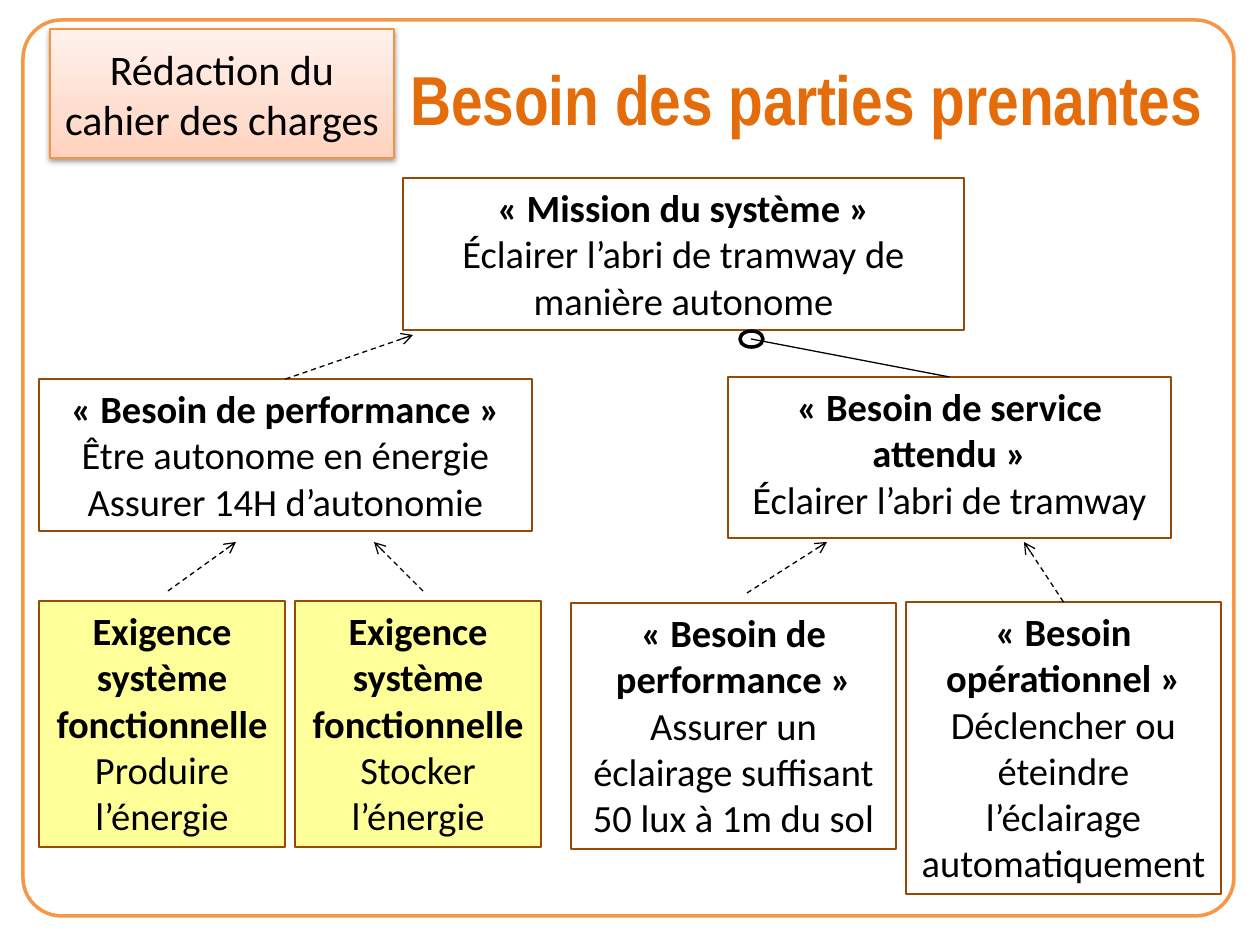
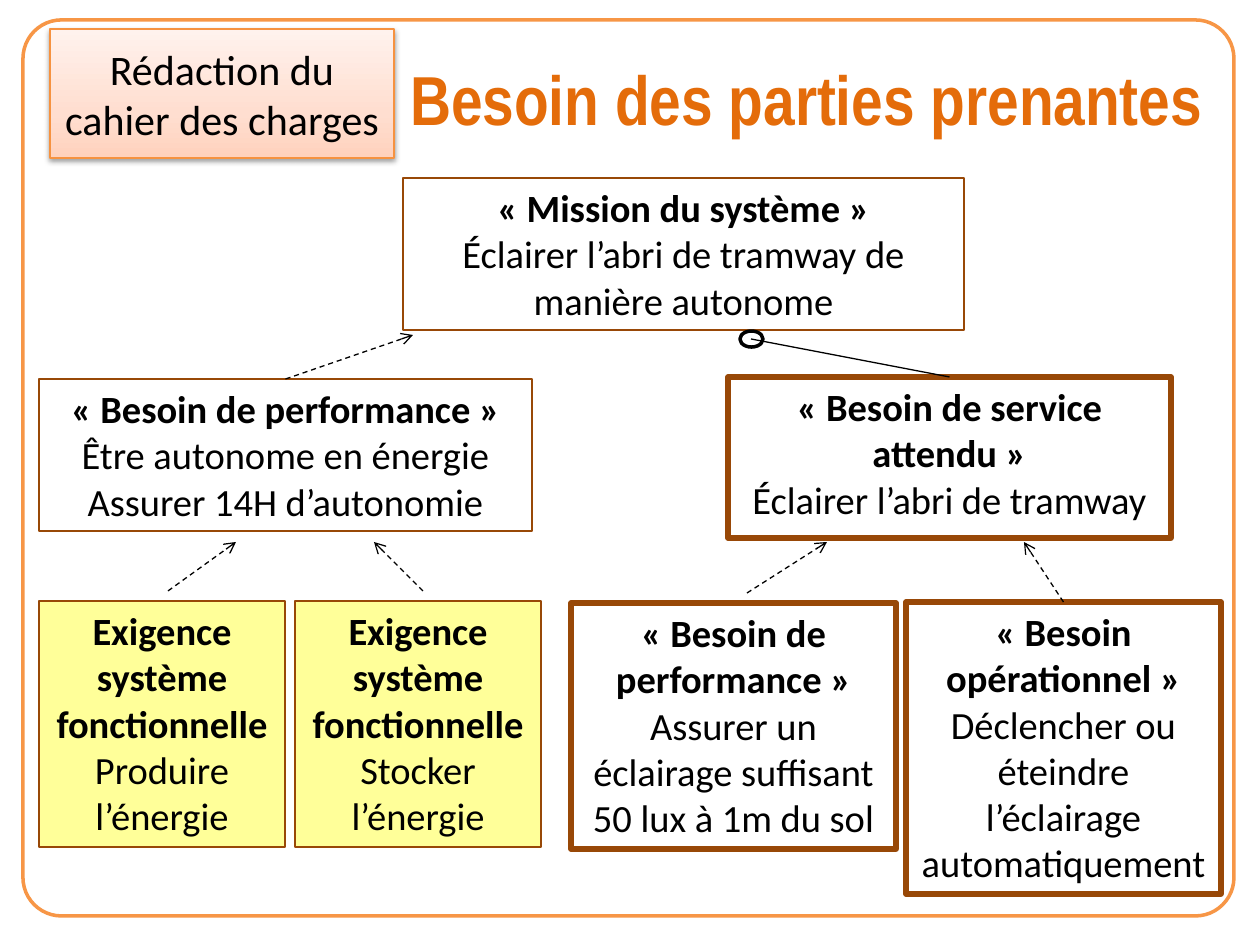
"""Build two slides showing the tree of stakeholder needs for a tram shelter."""
import copy
from typing import NamedTuple, Optional

import pptx
import pptx.dml.color
import pptx.enum.dml
import pptx.enum.shapes
import pptx.enum.text
import pptx.util
from lxml import etree
from pptx.oxml import ns

RGBColor = pptx.dml.color.RGBColor
Shapes = pptx.enum.shapes.MSO_SHAPE
Anchor = pptx.enum.text.MSO_ANCHOR

BLACK = RGBColor(0x00, 0x00, 0x00)
ORANGE = RGBColor(0xE4, 0x6C, 0x0A)
FRAME_ORANGE = RGBColor(0xF7, 0x96, 0x46)
BADGE_LINE = RGBColor(0xF6, 0x92, 0x40)
BADGE_STOPS = (
    (0.0, RGBColor(0xFF, 0xD2, 0xBD)),
    (0.35, RGBColor(0xFF, 0xDE, 0xD0)),
    (1.0, RGBColor(0xFF, 0xF2, 0xED)),
)
BROWN = RGBColor(0x98, 0x48, 0x07)
YELLOW = RGBColor(0xFF, 0xFF, 0x99)

BODY_FONT = "Calibri"
TITLE_FONT = "Arial Narrow"
PX_PER_INCH = 126
TITLE_ONLY_LAYOUT = 5
TOP_SITE = 0


class Area(NamedTuple):
    left: int
    top: int
    width: int
    height: int


class Need(NamedTuple):
    name: str
    area: Area
    heading: str
    details: tuple[str, ...]
    fill: Optional[RGBColor] = None
    line_width: float = 1


class Link(NamedTuple):
    start: tuple[int, int]
    end: tuple[int, int]
    from_top_of: Optional[str] = None
    dashed_arrow: bool = True


SLIDE_AREA = Area(0, 0, 1260, 945)
FRAME_AREA = Area(23, 20, 1211, 896)
BADGE_AREA = Area(50, 29, 344, 129)
TITLE_AREA = Area(393, 39, 827, 118)
RING_AREA = Area(740, 331, 23, 16)

NEEDS = (
    Need("mission", Area(403, 178, 561, 152), "« Mission du système »",
         ("Éclairer l’abri de tramway de manière autonome",), line_width=0.75),
    Need("performance", Area(39, 379, 493, 152), "« Besoin de performance »",
         ("Être autonome en énergie", "Assurer 14H d’autonomie")),
    Need("produce", Area(39, 601, 246, 246), "Exigence système fonctionnelle",
         ("Produire l’énergie",), YELLOW),
    Need("store", Area(295, 601, 246, 246), "Exigence système fonctionnelle",
         ("Stocker l’énergie",), YELLOW),
    Need("service", Area(728, 377, 443, 161), "« Besoin de service attendu »",
         ("Éclairer l’abri de tramway",)),
    Need("lighting", Area(571, 603, 325, 246), "« Besoin de performance »",
         ("Assurer un éclairage suffisant", "50 lux à 1m du sol")),
    Need("operation", Area(906, 602, 315, 292), "« Besoin opérationnel »",
         ("Déclencher ou éteindre l’éclairage automatiquement",)),
)
LINKS = (
    Link((286, 379), (413, 335), "performance"),
    Link((168, 591), (236, 542)),
    Link((423, 591), (374, 542)),
    Link((950, 377), (751, 339), "service", dashed_arrow=False),
    Link((747, 593), (827, 542)),
    Link((1063, 602), (1024, 542), "operation"),
)
HIGHLIGHTS = (frozenset(), frozenset({"service", "lighting", "operation"}))


def px(length: int) -> pptx.util.Emu:
    """Turn pixels into EMU."""
    return pptx.util.Emu(round(length * pptx.util.Inches(1) / PX_PER_INCH))


def add_box(page, kind, area: Area, line_color: RGBColor, line_width: float,
            fill: Optional[RGBColor] = None):
    """Add a flat outlined shape, filled only when a colour is given."""
    box = page.shapes.add_shape(kind, *map(px, area))
    box.shadow.inherit = False
    box.line.color.rgb = line_color
    box.line.width = pptx.util.Pt(line_width)
    if fill is None:
        box.fill.background()
    else:
        box.fill.solid()
        box.fill.fore_color.rgb = fill
    return box


def format_para(para, size: float, color: RGBColor, font: str = BODY_FONT,
                bold: bool = False) -> None:
    """Centre a paragraph and format its runs."""
    para.alignment = pptx.enum.text.PP_ALIGN.CENTER
    for span in para.runs:
        span.font.name = font
        span.font.size = pptx.util.Pt(size)
        span.font.bold = bold
        span.font.color.rgb = color


def add_badge(page) -> None:
    """Add the shaded section label."""
    badge = add_box(page, Shapes.RECTANGLE, BADGE_AREA, BADGE_LINE, 0.75)
    badge.fill.gradient()
    badge.fill.gradient_angle = 90
    properties = badge._element.spPr
    stop_list = properties.find(".//" + ns.qn("a:gsLst"))
    stop_list.append(copy.deepcopy(stop_list[-1]))
    for stop, (position, color) in zip(badge.fill.gradient_stops, BADGE_STOPS):
        stop.position = position
        stop.color.rgb = color
    effects = properties.find(ns.qn("a:effectLst"))
    shadow = etree.SubElement(effects, ns.qn("a:outerShdw"), blurRad="40000",
                              dist="20000", dir="5400000", rotWithShape="0")
    tint = etree.SubElement(shadow, ns.qn("a:srgbClr"), val=str(BLACK))
    etree.SubElement(tint, ns.qn("a:alpha"), val="38000")
    badge.text_frame.text = "Rédaction du cahier des charges"
    format_para(badge.text_frame.paragraphs[0], 24, BLACK)


def add_heading(page) -> None:
    """Add the frame, the section label and the title."""
    frame = add_box(page, Shapes.ROUNDED_RECTANGLE, FRAME_AREA, FRAME_ORANGE, 2)
    frame.adjustments[0] = 0.043
    add_badge(page)
    title = page.shapes.title
    title.left, title.top, title.width, title.height = map(px, TITLE_AREA)
    title.text_frame.text = "Besoin des parties prenantes"
    title.text_frame.vertical_anchor = Anchor.MIDDLE
    format_para(title.text_frame.paragraphs[0], 39.6, ORANGE, TITLE_FONT, True)


def add_need(page, need: Need, highlighted: bool):
    """Add one need with a bold heading above its details."""
    width = 3 if highlighted else need.line_width
    box = add_box(page, Shapes.RECTANGLE, need.area, BROWN, width, need.fill)
    frame = box.text_frame
    frame.word_wrap = True
    frame.vertical_anchor = Anchor.TOP
    frame.text = "\n".join((need.heading, *need.details))
    for index, para in enumerate(frame.paragraphs):
        format_para(para, 22, BLACK, bold=index == 0)
    return box


def add_link(page, link: Link, boxes: dict) -> None:
    """Add a line that leads from a need up to its parent."""
    line = page.shapes.add_connector(pptx.enum.shapes.MSO_CONNECTOR.STRAIGHT,
                                     *map(px, link.start + link.end))
    if link.from_top_of:
        line.begin_connect(boxes[link.from_top_of], TOP_SITE)
    line.line.color.rgb = BLACK
    line.line.width = pptx.util.Pt(0.75)
    if link.dashed_arrow:
        line.line.dash_style = pptx.enum.dml.MSO_LINE.DASH
        etree.SubElement(line.line._get_or_add_ln(), ns.qn("a:tailEnd"), type="arrow")
    etree.SubElement(line._element.spPr, ns.qn("a:effectLst"))


def add_needs_page(deck, highlights: frozenset) -> None:
    """Add a slide with the whole tree, outlining some needs boldly."""
    page = deck.slides.add_slide(deck.slide_layouts[TITLE_ONLY_LAYOUT])
    add_heading(page)
    boxes = {need.name: add_need(page, need, need.name in highlights)
             for need in NEEDS}
    for link in LINKS:
        add_link(page, link, boxes)
    add_box(page, Shapes.OVAL, RING_AREA, BLACK, 2)


def main() -> None:
    """Build and save the deck."""
    deck = pptx.Presentation()
    deck.slide_width = px(SLIDE_AREA.width)
    deck.slide_height = px(SLIDE_AREA.height)
    for highlights in HIGHLIGHTS:
        add_needs_page(deck, highlights)
    deck.save("out.pptx")


if __name__ == "__main__":
    main()
